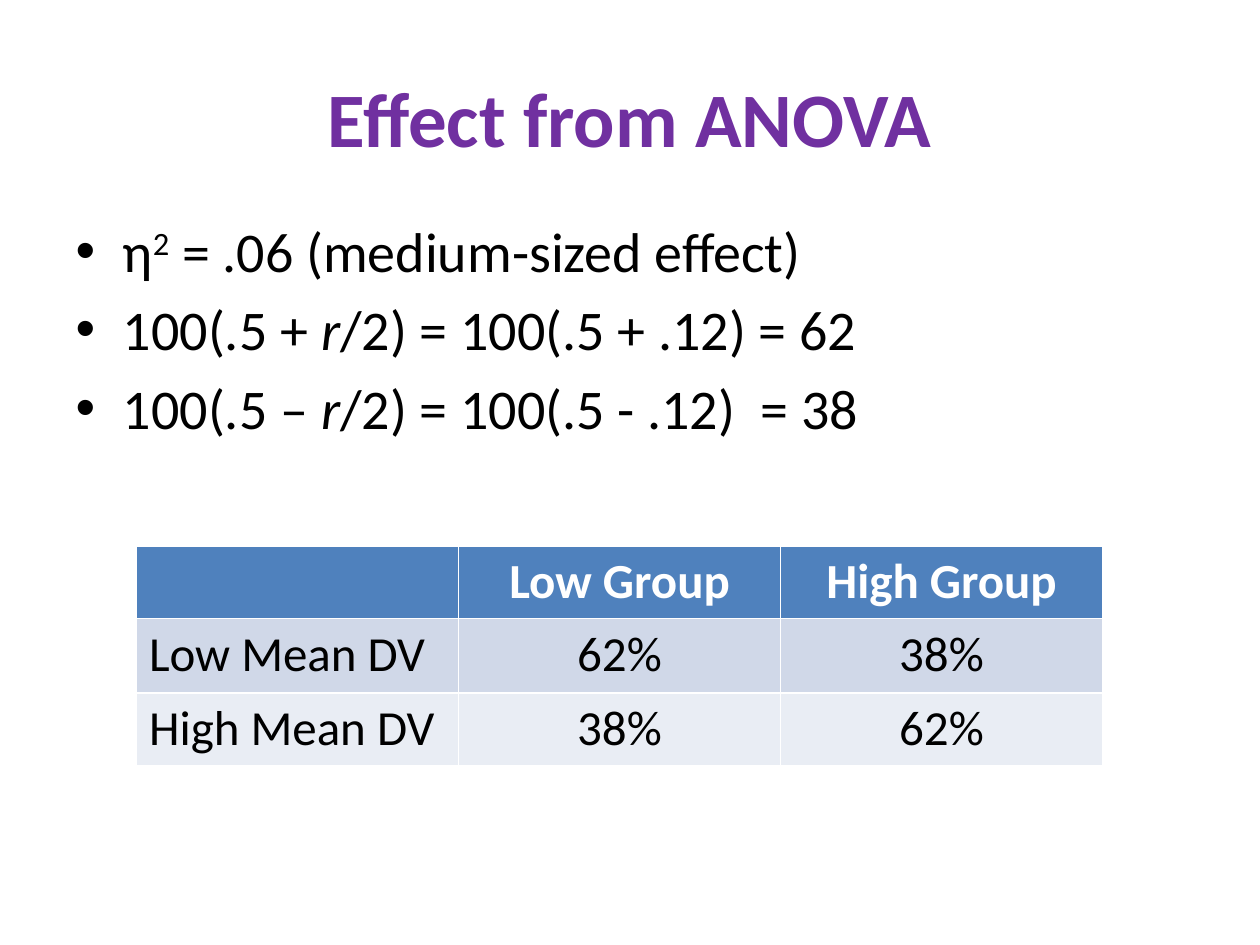
from pptx import Presentation
from pptx import util as u
from pptx.dml import color
from pptx.enum import text

Pt = u.Pt
CENTER = text.PP_ALIGN.CENTER


def rgb(value):
    return color.RGBColor.from_string(value)


class Deck:
    font = "Calibri"
    black, white, purple = "000000", "FFFFFF", "7030A0"
    header, bands = "4F81BD", ("D0D8E8", "E9EDF4")

    def __init__(self, width, height):
        self.prs = Presentation()
        self.prs.slide_width, self.prs.slide_height = Pt(width), Pt(height)
        self.s = self.prs.slides.add_slide(self.prs.slide_layouts[1])
        self.s.background.fill.solid()
        self.s.background.fill.fore_color.rgb = rgb(self.white)

    def place(self, sp, *box):
        sp.left, sp.top, sp.width, sp.height = map(Pt, box)
        return sp.text_frame

    def run(self, p, words, size, fill, bold=False, italic=False, raised=False):
        r = p.add_run()
        r.text = words
        r.font.name, r.font.size = self.font, Pt(size)
        r.font.bold, r.font.italic = bold, italic
        r.font.color.rgb = rgb(fill)
        if raised:
            r.font._element.set("baseline", "30000")

    def title(self, words, *box):
        tf = self.place(self.s.shapes.title, *box)
        tf.vertical_anchor = text.MSO_ANCHOR.MIDDLE
        p = tf.paragraphs[0]
        p.alignment = CENTER
        self.run(p, words, 44, self.purple, bold=True)

    def bullets(self, items, *box):
        tf = self.place(self.s.placeholders[1], *box)
        for i, item in enumerate(items):
            p = tf.add_paragraph() if i else tf.paragraphs[0]
            for words, style in item:
                self.run(p, words, 32, self.black, **style)

    def table(self, rows, heights, left, top, width):
        shape = self.s.shapes.add_table(
            len(rows), len(rows[0]), Pt(left), Pt(top), Pt(width), Pt(sum(heights)))
        for i, (row, height) in enumerate(zip(rows, heights)):
            shape.table.rows[i].height = Pt(height)
            for j, words in enumerate(row):
                self.cell(shape.table.cell(i, j), words, i, j)

    def cell(self, cell, words, i, j):
        cell.fill.solid()
        cell.fill.fore_color.rgb = rgb(self.bands[(i - 1) % 2] if i else self.header)
        if words:
            p = cell.text_frame.paragraphs[0]
            if j:
                p.alignment = CENTER
            self.run(p, words, 28, self.black if i else self.white, bold=i == 0)


def main():
    plain, italic, raised = {}, {"italic": True}, {"raised": True}
    deck = Deck(720, 540)
    deck.title("Effect from ANOVA", 36, 21.6, 648, 90)
    deck.bullets([
        [("η", plain), ("2", raised), (" = .06 (medium-sized effect)", plain)],
        [("100(.5 + ", plain), ("r", italic), ("/2) = 100(.5 + .12) = 62", plain)],
        [("100(.5 – ", plain), ("r", italic), ("/2) = 100(.5 - .12)  = 38", plain)],
    ], 36, 120, 648, 356.4)
    deck.table([
        ["", "Low Group", "High Group"],
        ["Low Mean DV", "62%", "38%"],
        ["High Mean DV", "38%", "62%"],
    ], [41, 42.5, 41], 78, 312, 552)
    deck.prs.save("out.pptx")


if __name__ == "__main__":
    main()
